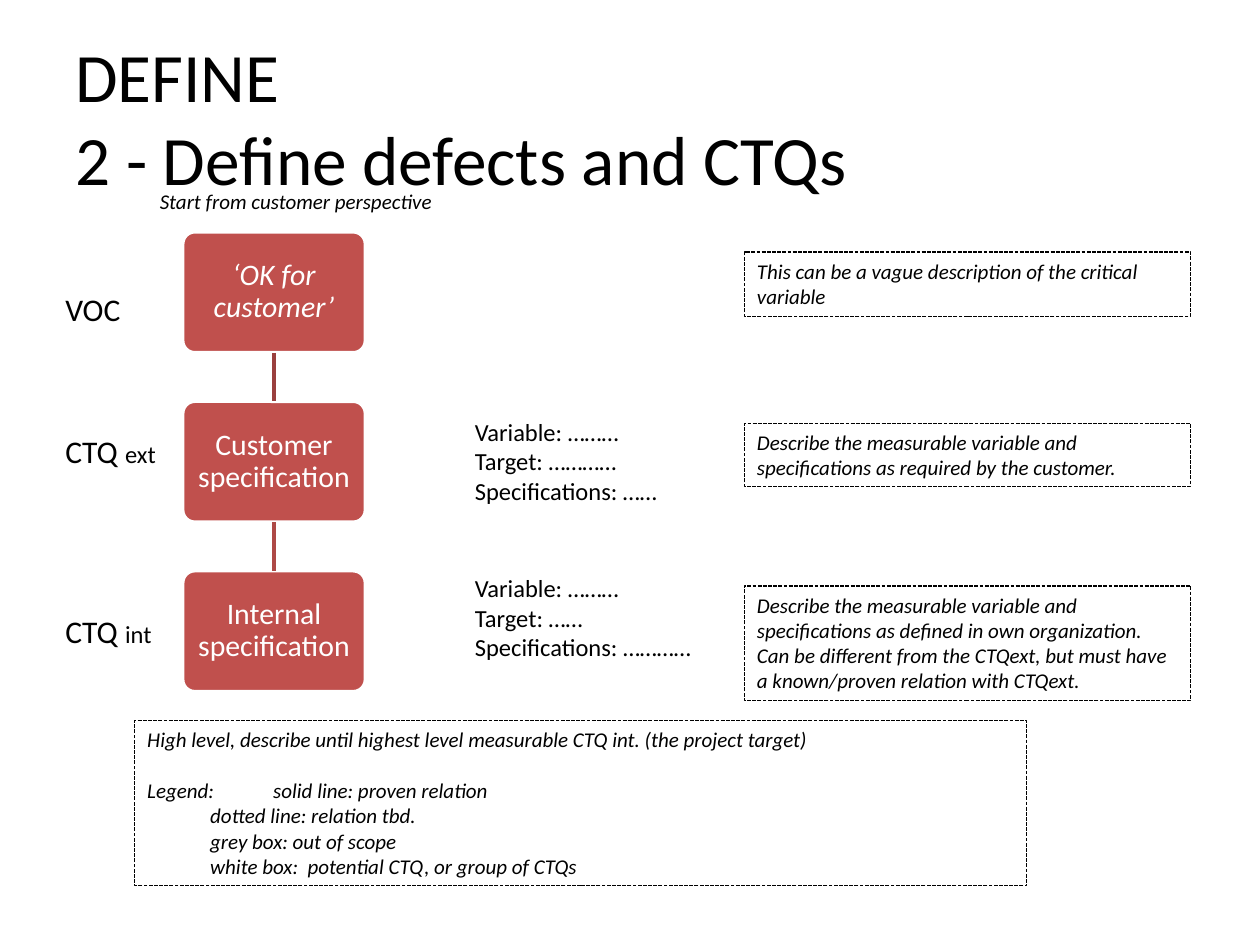
from dataclasses import dataclass

import lxml.etree
import pptx
import pptx.dml.color
import pptx.enum.dml
import pptx.enum.shapes
import pptx.enum.text
import pptx.oxml.ns
import pptx.util

PX = 4572  # EMU per px, 200 px to the inch
ANCHOR = pptx.enum.text.MSO_ANCHOR
ALIGN = pptx.enum.text.PP_ALIGN
SHAPE = pptx.enum.shapes.MSO_SHAPE


@dataclass(frozen=True)
class Theme:
    font: str = "Calibri"
    text: str = "000000"
    white: str = "FFFFFF"
    box: str = "C0504D"
    links: tuple[str, ...] = ("9A403E", "AE4946")
    title_pt: float = 39.6
    label_pt: float = 18
    box_pt: float = 17
    spec_pt: float = 14
    note_pt: float = 12


THEME = Theme()


@dataclass(frozen=True)
class Area:
    x: int
    y: int
    w: int
    h: int

    def emu(self) -> tuple[int, ...]:
        return tuple(v * PX for v in (self.x, self.y, self.w, self.h))


@dataclass(frozen=True)
class Label:
    area: Area
    text: str
    suffix: str = ""


@dataclass(frozen=True)
class Step:
    text: str
    italic: bool = False


@dataclass(frozen=True)
class TextBlock:
    area: Area
    lines: tuple[str, ...]


TITLE = TextBlock(Area(100, 60, 1800, 250), ("DEFINE", "2 - Define defects and CTQs"))
HINT = TextBlock(Area(234, 290, 566, 60), ("Start from customer perspective",))
LABELS = (
    Label(Area(84, 450, 300, 80), "VOC"),
    Label(Area(84, 676, 300, 88), "CTQ ", "ext"),
    Label(Area(84, 962, 300, 88), "CTQ ", "int"),
)
STEPS = (
    Step("‘OK for customer’", italic=True),
    Step("Customer specification"),
    Step("Internal specification"),
)
FIRST_STEP = Area(290, 368, 290, 192)
STEP_PITCH = 269
SPECS = (
    TextBlock(Area(734, 652, 734, 208),
              ("Variable: ………", "Target: …………", "Specifications: ……")),
    TextBlock(Area(734, 900, 716, 162),
              ("Variable: ………", "Target: ……", "Specifications: …………")),
)
NOTES = (
    TextBlock(Area(1182, 400, 708, 102),
              ("This can be a vague description of the critical variable",)),
    TextBlock(Area(1182, 672, 708, 100),
              ("Describe the measurable variable and specifications as required by "
               "the customer.",)),
    TextBlock(Area(1182, 930, 708, 182),
              ("Describe the measurable variable and specifications as defined in own "
               "organization. Can be different from the CTQext, but must have a "
               "known/proven relation with CTQext.",)),
)
LEGEND = TextBlock(Area(214, 1144, 1416, 262), (
    "High level, describe until highest level measurable CTQ int. (the project target)",
    "Legend: \tsolid line: proven relation",
    "\tdotted line: relation tbd.",
    "\tgrey box: out of scope",
    "\twhite box:  potential CTQ, or group of CTQs",
))


def rgb(color: str):
    return pptx.dml.color.RGBColor.from_string(color)


def write(sp, lines: tuple[str, ...], size: float, color: str = THEME.text,
          italic: bool = False, align=ALIGN.LEFT, anchor=ANCHOR.TOP) -> None:
    tf = sp.text_frame
    tf.word_wrap = True
    tf.vertical_anchor = anchor
    tf.text = "\n".join(lines)
    for p in tf.paragraphs:
        p.alignment = align
        p.font.name = THEME.font
        p.font.size = pptx.util.Pt(size)
        p.font.italic = italic
        p.font.color.rgb = rgb(color)


def add_text(s, block: TextBlock, size: float, **style):
    sp = s.shapes.add_textbox(*block.area.emu())
    write(sp, block.lines, size, **style)
    return sp


def add_label(s, label: Label) -> None:
    sp = add_text(s, TextBlock(label.area, (label.text,)), THEME.label_pt)
    if label.suffix:
        r = sp.text_frame.paragraphs[0].add_run()
        r.text = label.suffix
        r.font.size = pptx.util.Pt(THEME.spec_pt)


def add_spec(s, block: TextBlock) -> None:
    sp = s.shapes.add_shape(SHAPE.RECTANGLE, *block.area.emu())
    sp.shadow.inherit = False
    sp.fill.solid()
    sp.fill.fore_color.rgb = rgb(THEME.white)
    sp.line.fill.background()
    write(sp, block.lines, THEME.spec_pt)


def add_note(s, block: TextBlock):
    """Add an unfilled box with a dashed outline and italic text."""
    sp = s.shapes.add_shape(SHAPE.RECTANGLE, *block.area.emu())
    sp.shadow.inherit = False
    sp.fill.background()
    sp.line.color.rgb = rgb(THEME.text)
    sp.line.width = pptx.util.Pt(0.75)
    sp.line.dash_style = pptx.enum.dml.MSO_LINE.SQUARE_DOT
    write(sp, block.lines, THEME.note_pt, italic=True)
    return sp


def add_step(s, step: Step, area: Area):
    sp = s.shapes.add_shape(SHAPE.ROUNDED_RECTANGLE, *area.emu())
    sp.adjustments[0] = 0.1
    sp.shadow.inherit = False
    sp.fill.solid()
    sp.fill.fore_color.rgb = rgb(THEME.box)
    sp.line.color.rgb = rgb(THEME.white)
    sp.line.width = pptx.util.Pt(2)
    write(sp, (step.text,), THEME.box_pt, THEME.white, step.italic,
          ALIGN.CENTER, ANCHOR.MIDDLE)
    tf = sp.text_frame
    tf.margin_left = tf.margin_top = tf.margin_right = tf.margin_bottom = 14 * PX
    tf.paragraphs[0].line_spacing = 0.9
    return sp


def add_link(s, upper, lower, color: str) -> None:
    link = s.shapes.add_connector(pptx.enum.shapes.MSO_CONNECTOR.STRAIGHT, 0, 0, 0, 0)
    link.begin_connect(upper, 2)
    link.end_connect(lower, 0)
    link.line.color.rgb = rgb(color)
    link.line.width = pptx.util.Pt(2)
    lxml.etree.SubElement(link._element.spPr, pptx.oxml.ns.qn("a:effectLst"))


def main() -> None:
    prs = pptx.Presentation()
    prs.slide_width, prs.slide_height = 2000 * PX, 1500 * PX
    s = prs.slides.add_slide(prs.slide_layouts[6])

    add_text(s, TITLE, THEME.title_pt, anchor=ANCHOR.MIDDLE)
    add_text(s, HINT, THEME.note_pt, italic=True)
    for label in LABELS:
        add_label(s, label)
    for spec_block in SPECS:
        add_spec(s, spec_block)

    first = FIRST_STEP
    boxes = [add_step(s, step, Area(first.x, first.y + i * STEP_PITCH, first.w, first.h))
             for i, step in enumerate(STEPS)]
    for upper, lower, color in zip(boxes, boxes[1:], THEME.links):
        add_link(s, upper, lower, color)

    for note in NOTES:
        add_note(s, note)
    legend = add_note(s, LEGEND)
    legend.text_frame.paragraphs[1].space_before = pptx.util.Pt(14.6)
    prs.save("out.pptx")


if __name__ == "__main__":
    main()
